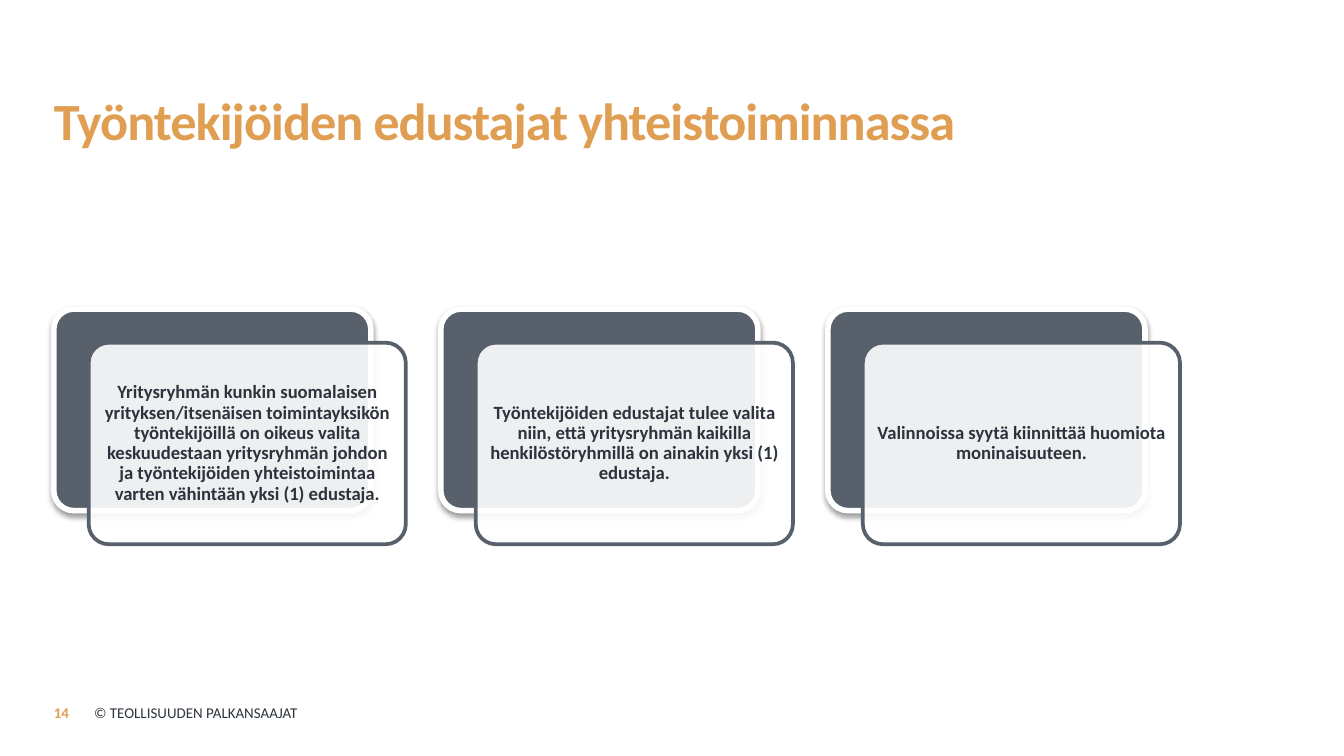
"""Build a slide with three layered cards on employee representatives."""
import pptx
import pptx.util
import pptx.dml.color
import pptx.enum.shapes
import pptx.enum.text
import pptx.oxml

COLORS = {"title": "E09E52", "slate": "58616B", "ink": "2C333D", "white": "FFFFFF"}
ANCHOR = pptx.enum.text.MSO_ANCHOR
ALIGN = pptx.enum.text.PP_ALIGN
NS = 'xmlns:a="http://schemas.openxmlformats.org/drawingml/2006/main"'
SHADOW = (
    f'<a:effectLst {NS}><a:outerShdw blurRad="39370" dist="20320" dir="5400000" rotWithShape="0">'
    '<a:srgbClr val="000000"><a:alpha val="38000"/></a:srgbClr></a:outerShdw></a:effectLst>'
)


def rgb(name):
    return pptx.dml.color.RGBColor.from_string(COLORS[name])


def write(s, text, size, color, bold, insets, anchor, paragraph):
    tf = s.text_frame
    left, top, right, bottom = [pptx.util.Inches(v) for v in insets]
    frame = {"word_wrap": True, "auto_size": pptx.enum.text.MSO_AUTO_SIZE.NONE,
             "vertical_anchor": anchor, "margin_left": left, "margin_top": top,
             "margin_right": right, "margin_bottom": bottom}
    p = tf.paragraphs[0]
    r = p.add_run()
    r.text = text
    font = {"name": "Calibri", "size": pptx.util.Pt(size), "bold": bold}
    for target, values in ((tf, frame), (p, paragraph), (r.font, font)):
        for key, value in values.items():
            setattr(target, key, value)
    r.font.color.rgb = rgb(color)
    return r


prs = pptx.Presentation()
prs.slide_width = pptx.util.Inches(10)
prs.slide_height = prs.slide_width * 9 // 16
slide = prs.slides.add_slide(prs.slide_layouts[5])

margin = 0.4
title = slide.shapes.title
place = {"left": margin, "top": 0.23, "width": 7.73, "height": 0.94}
for key, value in place.items():
    setattr(title, key, pptx.util.Inches(value))
r = write(title, "Työntekijöiden edustajat yhteistoiminnassa", 28, "title", True,
          (0, 0.05, 0, 0.05), ANCHOR.BOTTOM,
          {"alignment": ALIGN.LEFT, "line_spacing": pptx.util.Pt(27)})
r.font._element.set("spc", "-50")

cards = [
    "Yritysryhmän kunkin suomalaisen yrityksen/itsenäisen toimintayksikön työntekijöillä "
    "on oikeus valita keskuudestaan yritysryhmän johdon ja työntekijöiden yhteistoimintaa "
    "varten vähintään yksi (1) edustaja.",
    "Työntekijöiden edustajat tulee valita niin, että yritysryhmän kaikilla "
    "henkilöstöryhmillä on ainakin yksi (1) edustaja.",
    "Valinnoissa syytä kiinnittää huomiota moninaisuuteen.",
]
pitch, card_top, card_width, card_height = 2.88, 2.3, 2.36, 1.5
layers = [(0, 0, "slate", "white", 3), (0.26, 0.25, "white", "slate", 2)]

for column, text in enumerate(cards):
    pair = []
    for dx, dy, fill, line, weight in layers:
        box = (margin + column * pitch + dx, card_top + dy, card_width, card_height)
        s = slide.shapes.add_shape(pptx.enum.shapes.MSO_SHAPE.ROUNDED_RECTANGLE,
                                   *[pptx.util.Inches(v) for v in box])
        s.adjustments[0] = 0.1
        s.shadow.inherit = False
        s.fill.solid()
        s.fill.fore_color.rgb = rgb(fill)
        s.line.color.rgb = rgb(line)
        s.line.width = pptx.util.Pt(weight)
        pair.append(s)
    back, front = pair
    effects = back._element.spPr.find(pptx.oxml.ns.qn("a:effectLst"))
    back._element.spPr.replace(effects, pptx.oxml.parse_xml(SHADOW))
    tint = front._element.spPr.find(pptx.oxml.ns.qn("a:solidFill"))[0]
    tint.append(pptx.oxml.parse_xml(f'<a:alpha {NS} val="90000"/>'))
    write(front, text, 10, "ink", True, (0.04, 0.04, 0.04, 0.04), ANCHOR.MIDDLE,
          {"alignment": ALIGN.CENTER, "line_spacing": 0.9})

footer = [
    (margin, 0.28, "14", "title", True, 0),
    (0.7, 3.17, "© TEOLLISUUDEN PALKANSAAJAT", "ink", False, 0.1),
]
for left, width, text, color, bold, right_inset in footer:
    s = slide.shapes.add_textbox(*[pptx.util.Inches(v) for v in (left, 5.15, width, 0.3)])
    write(s, text, 8, color, bold, (0, 0.05, right_inset, 0.05), ANCHOR.MIDDLE,
          {"alignment": ALIGN.LEFT, "space_after": pptx.util.Pt(6)})

prs.save("out.pptx")
